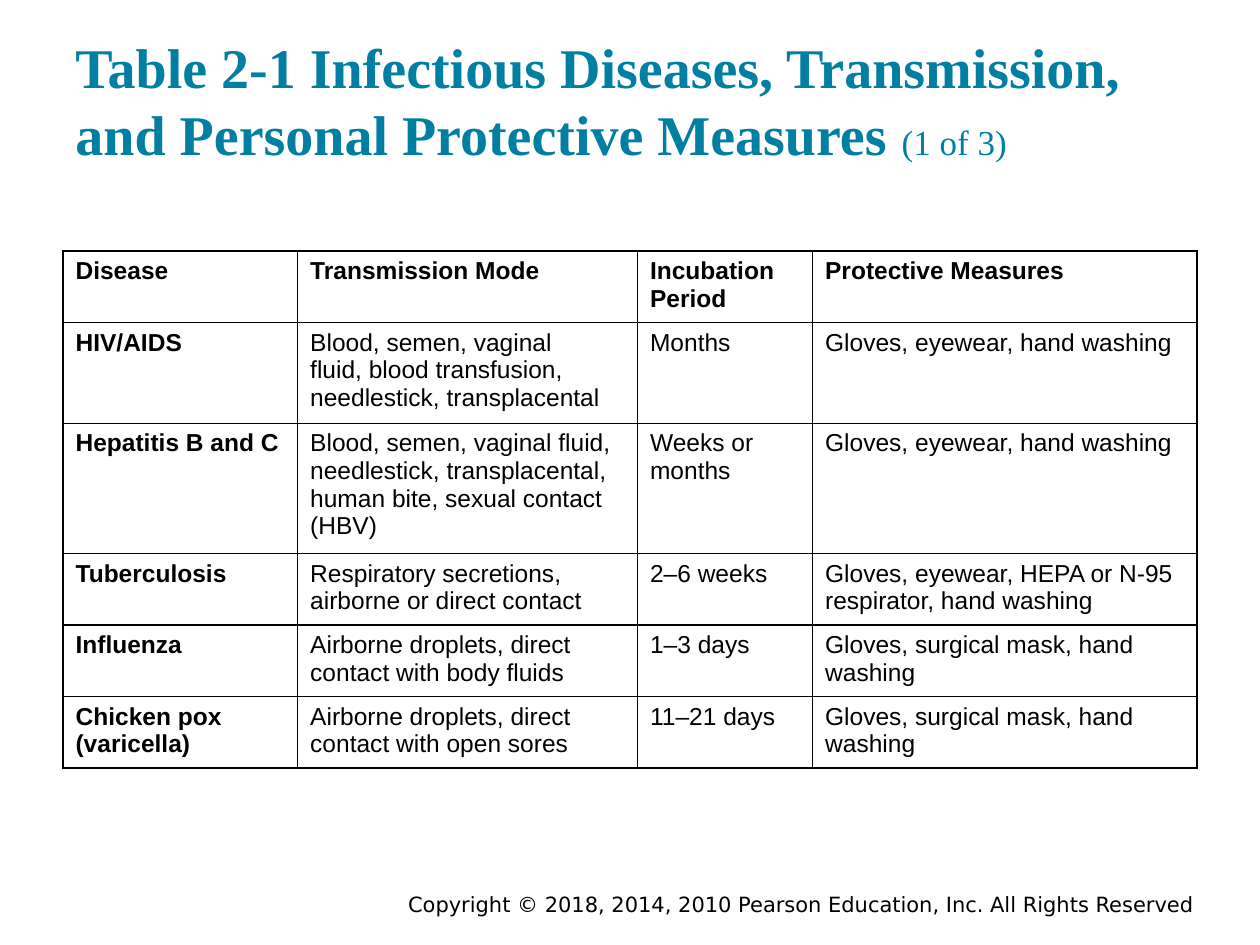
from dataclasses import dataclass

from lxml.etree import SubElement
from pptx import Presentation
from pptx.dml.color import RGBColor
from pptx.enum.text import MSO_ANCHOR as Anchor, MSO_AUTO_SIZE as AutoSize, PP_ALIGN as Align
from pptx.oxml.ns import qn
from pptx.util import Cm, Pt


@dataclass(frozen=True)
class Theme:
    teal: str = "007FA3"
    black: str = "000000"
    title_font: str = "Times New Roman"
    body_font: str = "Arial"
    footer_font: str = "DejaVu Sans"
    title_size: int = 32
    part_size: int = 20
    body_size: int = 14
    footer_size: int = 12


THEME = Theme()

COLUMN_WIDTHS = (4.73, 6.85, 3.53, 7.75)
LINE_HEIGHT = 0.555
CELL_PADDING = 0.25

# Each row: number of text lines it needs, then its cells; "\n" starts a paragraph.
ROWS = (
    (2, ("Disease", "Transmission Mode", "Incubation Period", "Protective Measures")),
    (3, ("HIV/AIDS",
         "Blood, semen, vaginal\nfluid, blood transfusion,\nneedlestick, transplacental",
         "Months", "Gloves, eyewear, hand washing")),
    (4, ("Hepatitis B and C",
         "Blood, semen, vaginal fluid, needlestick, transplacental, "
         "human bite, sexual contact (HBV)",
         "Weeks or months", "Gloves, eyewear, hand washing")),
    (2, ("Tuberculosis", "Respiratory secretions,\nairborne or direct contact",
         "2–6 weeks", "Gloves, eyewear, HEPA or N-95 respirator, hand washing")),
    (2, ("Influenza", "Airborne droplets, direct\ncontact with body fluids",
         "1–3 days", "Gloves, surgical mask, hand washing")),
    (2, ("Chicken pox\n(varicella)", "Airborne droplets, direct\ncontact with open sores",
         "11–21 days", "Gloves, surgical mask, hand washing")),
)


def add_text(paragraph, text, *, font, size, color=THEME.black, bold=False, align=Align.LEFT):
    paragraph.alignment = align
    run = paragraph.add_run()
    run.text = text
    run.font.name = font
    run.font.size = Pt(size)
    run.font.bold = bold
    run.font.color.rgb = RGBColor.from_string(color)


def set_title(slide, text, part):
    title = slide.shapes.title
    title.left, title.top, title.width, title.height = Cm(1.27), Cm(0.64), Cm(22.86), Cm(2.97)
    frame = title.text_frame
    frame.auto_size = AutoSize.NONE
    frame.word_wrap = True
    frame.vertical_anchor = Anchor.BOTTOM
    frame.margin_left = frame.margin_right = Cm(0.25)
    frame.margin_top = frame.margin_bottom = Cm(0.25)
    paragraph = frame.paragraphs[0]
    style = {"font": THEME.title_font, "color": THEME.teal}
    add_text(paragraph, text, size=THEME.title_size, bold=True, **style)
    add_text(paragraph, part, size=THEME.part_size, **style)


def set_borders(cell):
    properties = cell._tc.get_or_add_tcPr()
    for position, side in enumerate(("a:lnL", "a:lnR", "a:lnT", "a:lnB")):
        line = SubElement(properties, qn(side), w=str(Pt(1)))
        fill = SubElement(line, qn("a:solidFill"))
        SubElement(fill, qn("a:srgbClr"), val=THEME.black)
        properties.insert(position, line)  # borders come before the cell's fill


def fill_cell(cell, text, bold):
    cell.fill.background()
    set_borders(cell)
    frame = cell.text_frame
    for index, line in enumerate(text.split("\n")):
        paragraph = frame.add_paragraph() if index else frame.paragraphs[0]
        add_text(paragraph, line, font=THEME.body_font, size=THEME.body_size, bold=bold)


def add_disease_table(slide):
    heights = [Cm(CELL_PADDING + LINE_HEIGHT * lines) for lines, _ in ROWS]
    table = slide.shapes.add_table(
        len(ROWS), len(COLUMN_WIDTHS), Cm(1.27), Cm(5.06),
        Cm(sum(COLUMN_WIDTHS)), sum(heights)).table
    for column, width in zip(table.columns, COLUMN_WIDTHS):
        column.width = Cm(width)
    for row_index, (row, height, (_, texts)) in enumerate(zip(table.rows, heights, ROWS)):
        row.height = height
        for column_index, (cell, text) in enumerate(zip(row.cells, texts)):
            fill_cell(cell, text, bold=row_index == 0 or column_index == 0)


def add_footer(slide, text):
    footer = slide.shapes.add_textbox(Cm(7.42), Cm(17.91), Cm(16.91), Cm(0.64))
    frame = footer.text_frame
    frame.word_wrap = True
    frame.vertical_anchor = Anchor.MIDDLE
    add_text(frame.paragraphs[0], text, font=THEME.footer_font,
             size=THEME.footer_size, align=Align.RIGHT)


def main():
    presentation = Presentation()
    presentation.slide_width, presentation.slide_height = Cm(25.4), Cm(19.05)
    slide = presentation.slides.add_slide(presentation.slide_layouts[5])
    add_footer(slide, "Copyright © 2018, 2014, 2010 Pearson Education, Inc. All Rights Reserved")
    set_title(slide, "Table 2-1 Infectious Diseases, Transmission, "
                     "and Personal Protective Measures ", "(1 of 3)")
    add_disease_table(slide)
    presentation.save("out.pptx")


if __name__ == "__main__":
    main()
